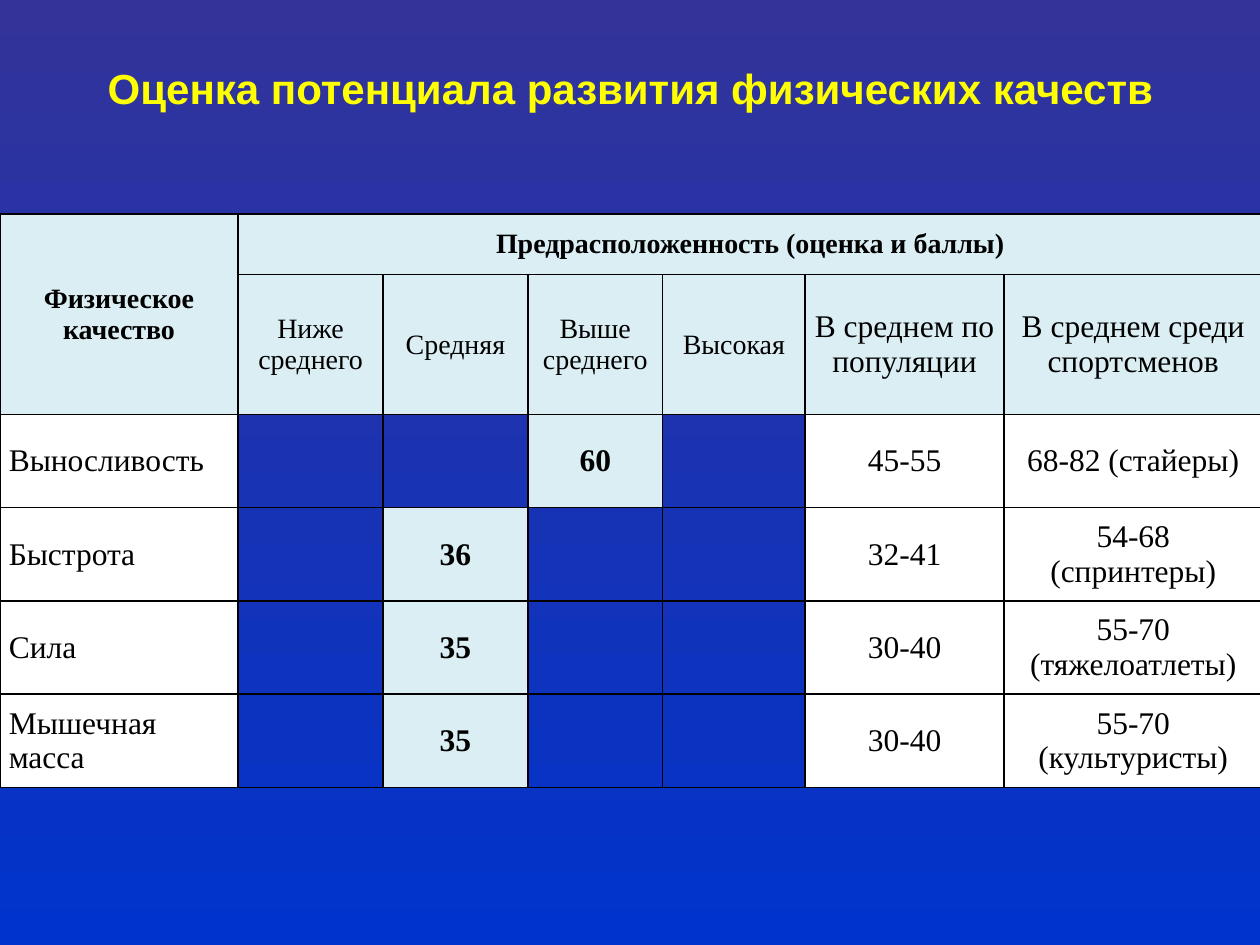
from dataclasses import dataclass

from lxml.etree import SubElement
from pptx import Presentation
from pptx.dml.color import RGBColor
from pptx.enum.text import MSO_ANCHOR, PP_ALIGN
from pptx.oxml.ns import qn
from pptx.util import Inches, Pt


@dataclass(frozen=True)
class Theme:
    sky_top: str = "333399"
    sky_bottom: str = "0033CC"
    title: str = "FFFF00"
    ink: str = "000000"
    tint: str = "DAEEF3"
    plain: str = "FFFFFF"
    title_font: str = "Arial"
    table_font: str = "Times New Roman"
    title_size: int = 24
    header_size: int = 16
    body_size: int = 18
    border: int = 1


theme = Theme()


def write(frame, text, *, size, font=theme.table_font, color=theme.ink,
          bold=False, align=PP_ALIGN.CENTER):
    para = frame.paragraphs[0]
    para.alignment = align
    span = para.add_run()
    span.text = text
    span.font.size = Pt(size)
    span.font.name = font
    span.font.bold = bold
    span.font.color.rgb = RGBColor.from_string(color)


def outline(cell):
    properties = cell._tc.get_or_add_tcPr()
    for side in ("a:lnL", "a:lnR", "a:lnT", "a:lnB"):
        line = SubElement(properties, qn(side), w=str(Pt(theme.border)))
        fill = SubElement(line, qn("a:solidFill"))
        SubElement(fill, qn("a:srgbClr"), val=theme.ink)


deck = Presentation()
deck.slide_width, deck.slide_height = Inches(10), Inches(7.5)
page = deck.slides.add_slide(deck.slide_layouts[5])

# Background running from top to bottom
backdrop = page.background.fill
backdrop.gradient()
backdrop.gradient_angle = 270
for stop, color, position in zip(backdrop.gradient_stops,
                                 (theme.sky_top, theme.sky_bottom), (0, 1)):
    stop.color.rgb = RGBColor.from_string(color)
    stop.position = position

# Title
title = page.shapes.title
title.left, title.top = Inches(0.59), Inches(0.44)
title.width, title.height = Inches(8.83), Inches(0.51)
title.text_frame.word_wrap = True
title.text_frame.vertical_anchor = MSO_ANCHOR.MIDDLE
write(title.text_frame, "Оценка потенциала развития физических качеств",
      size=theme.title_size, font=theme.title_font, color=theme.title, bold=True)

# Table contents: two header rows, then one row for each quality
rows = [
    ["Физическое качество", "Предрасположенность (оценка и баллы)", "", "", "", "", ""],
    ["", "Ниже среднего", "Средняя", "Выше среднего", "Высокая",
     "В среднем по популяции", "В среднем среди спортсменов"],
    ["Выносливость", "", "", "60", "", "45-55", "68-82 (стайеры)"],
    ["Быстрота", "", "36", "", "", "32-41", "54-68 (спринтеры)"],
    ["Сила", "", "35", "", "", "30-40", "55-70 (тяжелоатлеты)"],
    ["Мышечная масса", "", "35", "", "", "30-40", "55-70 (культуристы)"],
]
widths = [1.89, 1.15, 1.15, 1.07, 1.13, 1.58, 2.05]
heights = [0.48, 1.11] + [0.74] * 4

# Table grid
table = page.shapes.add_table(len(rows), len(widths), Inches(0), Inches(1.7),
                              Inches(10), Inches(4.53)).table
table.first_row = table.horz_banding = False
for column, width in zip(table.columns, widths):
    column.width = Inches(width)
for row, height in zip(table.rows, heights):
    row.height = Inches(height)
table.cell(0, 0).merge(table.cell(1, 0))
table.cell(0, 1).merge(table.cell(0, 6))

# Cells: headers and scores are tinted, empty grades show the background
for r, texts in enumerate(rows):
    for c, text in enumerate(texts):
        cell = table.cell(r, c)
        header = r < 2
        score = not header and 1 <= c <= 4
        outline(cell)
        cell.vertical_anchor = MSO_ANCHOR.MIDDLE
        cell.margin_left = cell.margin_right = Inches(0.07)
        cell.margin_top = cell.margin_bottom = Inches(0)
        if score and not text:
            cell.fill.background()
            continue
        cell.fill.solid()
        cell.fill.fore_color.rgb = RGBColor.from_string(
            theme.tint if header or score else theme.plain)
        if text:
            write(cell.text_frame, text,
                  size=theme.header_size if header and c < 5 else theme.body_size,
                  bold=r == 0 or score,
                  align=PP_ALIGN.LEFT if c == 0 and not header else PP_ALIGN.CENTER)

deck.save("out.pptx")
